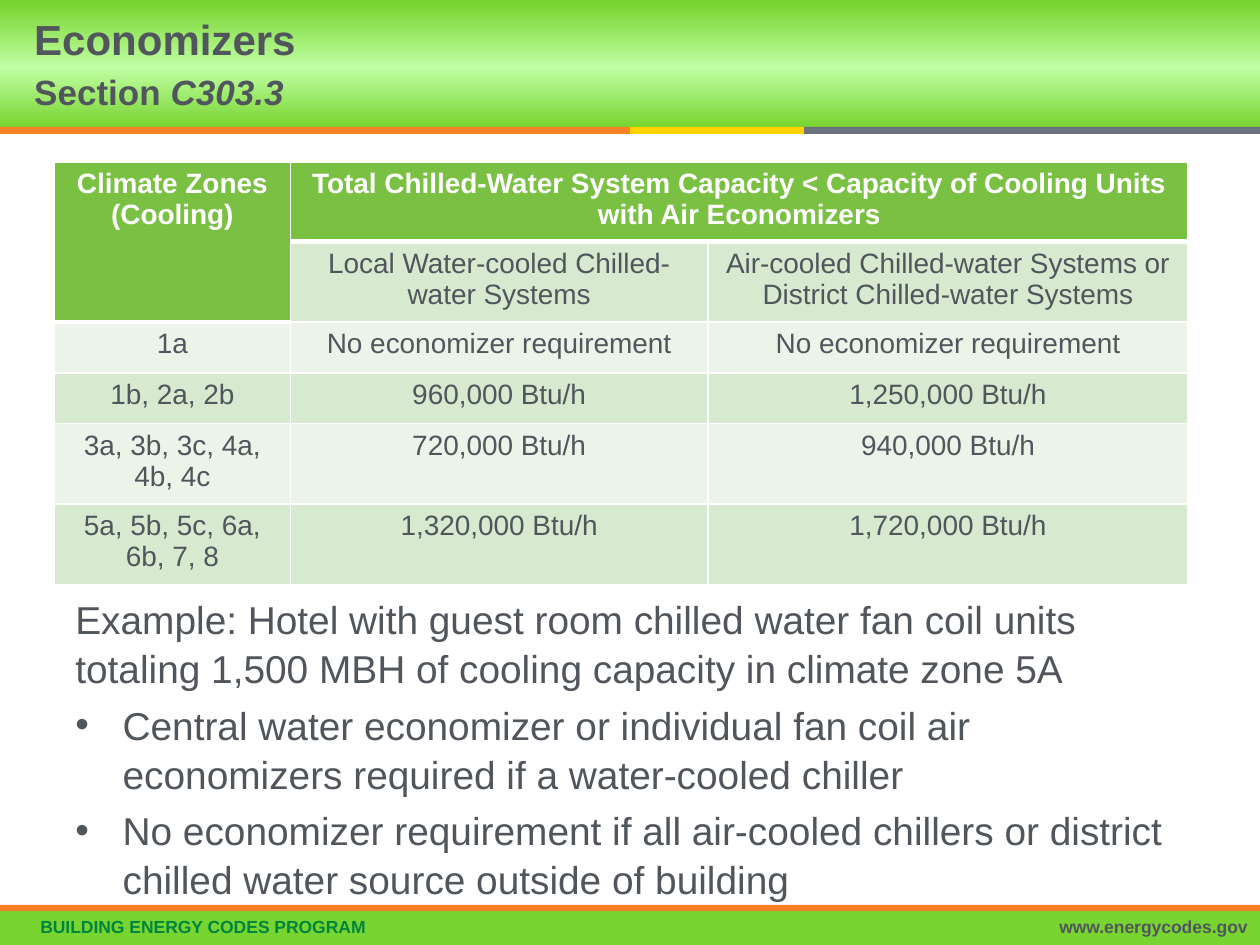
from copy import deepcopy

from lxml import etree
from pptx import Presentation
from pptx.dml.color import RGBColor
from pptx.enum.shapes import MSO_SHAPE
from pptx.enum.text import MSO_ANCHOR, PP_ALIGN
from pptx.oxml.ns import qn
from pptx.util import Pt

RECTANGLE = MSO_SHAPE.RECTANGLE
LEFT, CENTER, RIGHT = PP_ALIGN.LEFT, PP_ALIGN.CENTER, PP_ALIGN.RIGHT
TOP, MIDDLE = MSO_ANCHOR.TOP, MSO_ANCHOR.MIDDLE

WHITE = RGBColor(0xFF, 0xFF, 0xFF)
SLATE = RGBColor(0x50, 0x56, 0x5C)
LIME = RGBColor(0x78, 0xD4, 0x30)
PALE_LIME = RGBColor(0xC0, 0xFF, 0xA4)
ORANGE = RGBColor(0xF5, 0x80, 0x25)
YELLOW = RGBColor(0xFF, 0xD2, 0x00)
GRAY = RGBColor(0x6A, 0x73, 0x7B)
FOREST = RGBColor(0x00, 0x85, 0x3F)
HEADER_GREEN = RGBColor(0x7A, 0xC1, 0x43)
BAND_DARK = RGBColor(0xD7, 0xE9, 0xCF)
BAND_LIGHT = RGBColor(0xEC, 0xF4, 0xE9)

BREAK = "\n"
HEAVY_EDGES = {(1, 0), (1, 1), (1, 2), (2, 0)}

CAPACITY_ROWS = [
    ["Climate Zones\n(Cooling)",
     "Total Chilled-Water System Capacity < Capacity of Cooling Units with Air Economizers", ""],
    ["", "Local Water-cooled Chilled-water Systems",
     "Air-cooled Chilled-water Systems or District Chilled-water Systems"],
    ["1a", "No economizer requirement", "No economizer requirement"],
    ["1b, 2a, 2b", "960,000 Btu/h", "1,250,000 Btu/h"],
    ["3a, 3b, 3c, 4a, 4b, 4c", "720,000 Btu/h", "940,000 Btu/h"],
    ["5a, 5b, 5c, 6a, 6b, 7, 8", "1,320,000 Btu/h", "1,720,000 Btu/h"],
]
EXAMPLE = ("Example: Hotel with guest room chilled water fan coil units "
           "totaling 1,500 MBH of cooling capacity in climate zone 5A")
OUTCOMES = [
    "Central water economizer or individual fan coil air economizers "
    "required if a water-cooled chiller",
    "No economizer requirement if all air-cooled chillers or district "
    "chilled water source outside of building",
]


def write(paragraph, text, size=16, color=SLATE, bold=False, italic=False,
          align=LEFT, spacing=None, before=None, bullet=False):
    """Append formatted text, or a line break, to a paragraph."""
    if text == BREAK:
        paragraph.add_line_break()
        return
    if bullet:
        properties = paragraph._p.get_or_add_pPr()
        properties.set("marL", str(Pt(27)))
        properties.set("indent", str(-Pt(27)))
        etree.SubElement(properties, qn("a:buFont"), typeface="Arial")
        etree.SubElement(properties, qn("a:buChar"), char="•")
    paragraph.alignment = align
    if spacing is not None:
        paragraph.line_spacing = spacing
    if before is not None:
        paragraph.space_before = before
    run = paragraph.add_run()
    run.text = text
    font = run.font
    font.name, font.size = "Arial", Pt(size)
    font.bold, font.italic = bold, italic
    font.color.rgb = color


class SlideBuilder:
    """Hold the slide and its shared element styles."""

    def __init__(self, slide):
        self.slide = slide

    def bar(self, left, top, width, height, color):
        shape = self.slide.shapes.add_shape(
            RECTANGLE, Pt(left), Pt(top), Pt(width), Pt(height))
        shape.shadow.inherit = False
        shape.line.fill.background()
        shape.fill.solid()
        shape.fill.fore_color.rgb = color
        return shape

    def gradient_bar(self, left, top, width, height, stops):
        fill = self.bar(left, top, width, height, LIME).fill
        fill.gradient()
        fill.gradient_angle = 90
        first = fill.gradient_stops[0]._gs
        for _ in stops[2:]:
            first.addnext(deepcopy(first))
        for stop, (position, color) in zip(fill.gradient_stops, stops):
            stop.position = position
            stop.color.rgb = color

    def text(self, left, top, width, height, paragraphs, anchor=TOP):
        frame = self.slide.shapes.add_textbox(
            Pt(left), Pt(top), Pt(width), Pt(height)).text_frame
        frame.word_wrap = True
        frame.vertical_anchor = anchor
        for index, runs in enumerate(paragraphs):
            paragraph = frame.add_paragraph() if index else frame.paragraphs[0]
            for content, style in runs:
                write(paragraph, content, **style)

    def border(self, cell, edge, width):
        line = etree.SubElement(
            cell._tc.get_or_add_tcPr(), qn(f"a:ln{edge}"), w=str(Pt(width)))
        solid = etree.SubElement(line, qn("a:solidFill"))
        etree.SubElement(solid, qn("a:srgbClr"), val=str(WHITE))

    def cell(self, cell, row, column, content):
        header = row == 0 or (row == 1 and column == 0)
        for edge, line_row in (("L", None), ("R", None), ("T", row), ("B", row + 1)):
            self.border(cell, edge, 3 if (line_row, column) in HEAVY_EDGES else 1)
        cell.fill.solid()
        band = BAND_DARK if row % 2 else BAND_LIGHT
        cell.fill.fore_color.rgb = HEADER_GREEN if header else band
        if not content:
            return
        frame = cell.text_frame
        for index, line in enumerate(content.split(BREAK)):
            paragraph = frame.add_paragraph() if index else frame.paragraphs[0]
            write(paragraph, line, color=WHITE if header else SLATE,
                  bold=header, align=CENTER)

    def table(self, left, top, widths, heights, rows, merges):
        table = self.slide.shapes.add_table(
            len(heights), len(widths), Pt(left), Pt(top),
            Pt(sum(widths)), Pt(sum(heights))).table
        for column, width in zip(table.columns, widths):
            column.width = Pt(width)
        for row, height in zip(table.rows, heights):
            row.height = Pt(height)
        for row, contents in enumerate(rows):
            for column, content in enumerate(contents):
                self.cell(table.cell(row, column), row, column, content)
        for start, end in merges:
            table.cell(*start).merge(table.cell(*end))


def main():
    presentation = Presentation()
    presentation.slide_width, presentation.slide_height = Pt(720), Pt(540)
    builder = SlideBuilder(presentation.slides.add_slide(presentation.slide_layouts[6]))

    builder.gradient_bar(-2, 0, 722, 72.5, [(0, LIME), (0.47, PALE_LIME), (0.97, LIME)])
    builder.bar(0, 520.5, 720, 19.5, LIME)
    left = 0
    for width, color in ((360, ORANGE), (99.5, YELLOW), (260.5, GRAY)):
        builder.bar(left, 72.5, width, 4, color)
        left += width
    builder.bar(0, 517, 720, 3.5, ORANGE)

    footer = dict(size=10, bold=True, spacing=0.9)
    builder.text(16, 521.5, 560, 18.5,
                 [[("BUILDING ENERGY CODES PROGRAM", dict(footer, color=FOREST))]])
    builder.text(431.5, 521.5, 288.5, 18.5,
                 [[("www.energycodes.gov", dict(footer, align=RIGHT))]])

    builder.table(31, 92.5, [135, 238.5, 274.5], [44.5, 46, 29, 29, 46, 46],
                  CAPACITY_ROWS, [((0, 0), (1, 0)), ((0, 1), (0, 2))])

    heading = dict(bold=True, spacing=Pt(28))
    section = dict(heading, size=20)
    builder.text(12.5, 0, 448, 72.5, [[
        ("Economizers", dict(heading, size=24)), (BREAK, {}),
        ("Section ", section), ("C303.3", dict(section, italic=True)),
    ]], anchor=MIDDLE)

    body = dict(size=22.2, spacing=1.05)
    outcome_style = dict(body, before=Pt(4.4), bullet=True)
    builder.text(36, 335.5, 648, 168.5,
                 [[(EXAMPLE, body)]] + [[(outcome, outcome_style)] for outcome in OUTCOMES])

    presentation.save("out.pptx")


if __name__ == "__main__":
    main()
